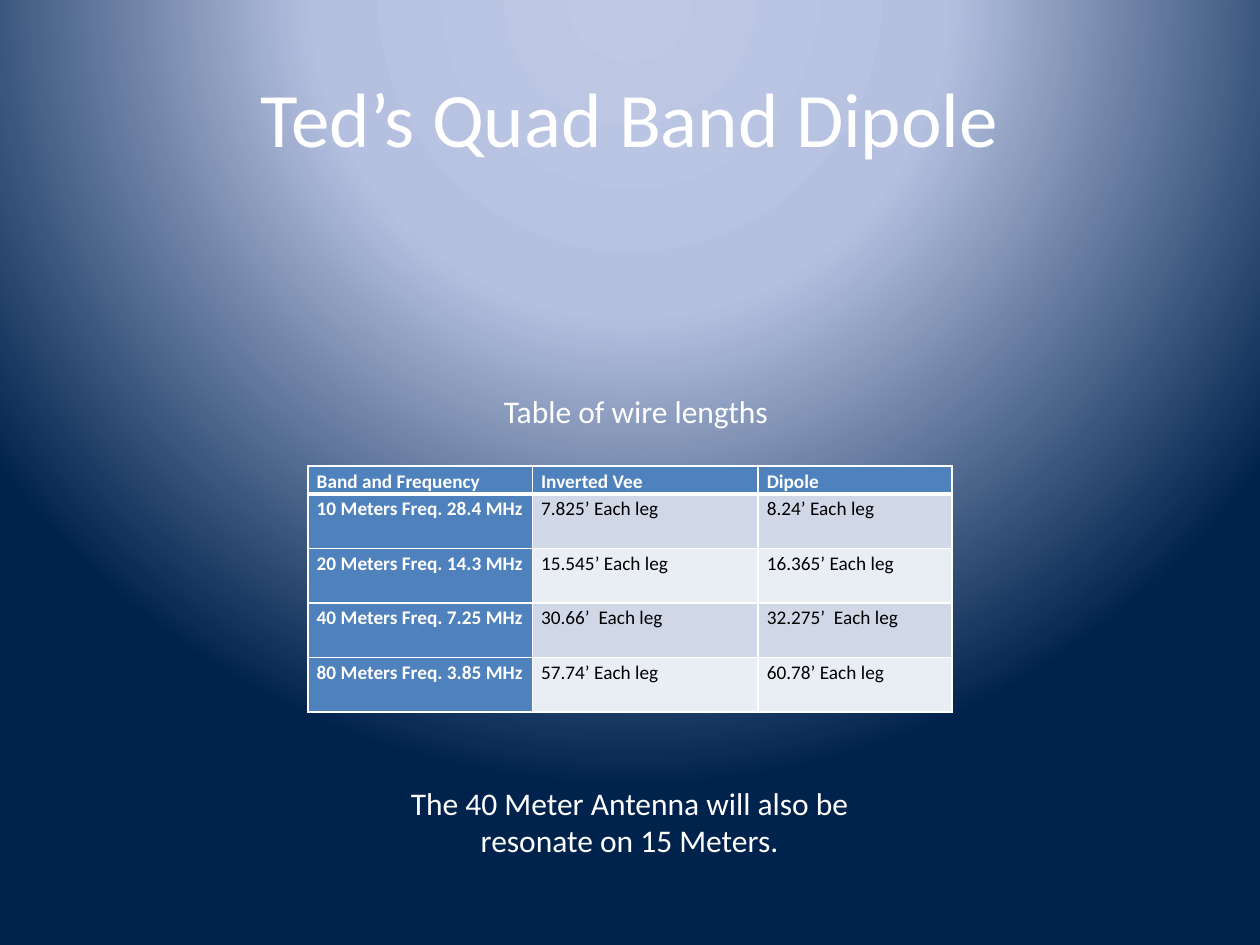
from dataclasses import dataclass

from pptx import Presentation
from pptx.dml.color import RGBColor
from pptx.enum import text
from pptx.oxml import parse_xml
from pptx.oxml.ns import nsdecls
from pptx.util import Pt


@dataclass(frozen=True)
class Theme:
    font: str = "Calibri"
    title: int = 44
    body: int = 18
    cell: int = 11
    light: str = "FFFFFF"
    dark: str = "000000"
    accent: str = "4F81BD"
    bands: tuple = ("D0D8E8", "E9EDF4")
    glow: tuple = ((0, "BFC9E5"), (40, "B5C0E0"), (100, "00234D"))


class Deck:
    def __init__(self, prs, theme):
        self.theme = theme
        self.s = prs.slides.add_slide(prs.slide_layouts[6])

    def background(self):
        """Radial gradient centred above the slide's top edge."""
        stops = "".join(
            f'<a:gs pos="{pos * 1000}"><a:srgbClr val="{color}"/></a:gs>'
            for pos, color in self.theme.glow)
        bg = parse_xml(
            f'<p:bg {nsdecls("p", "a")}><p:bgPr><a:gradFill rotWithShape="1">'
            f'<a:gsLst>{stops}</a:gsLst><a:path path="circle">'
            '<a:fillToRect l="50000" t="-80000" r="50000" b="180000"/>'
            '</a:path></a:gradFill><a:effectLst/></p:bgPr></p:bg>')
        self.s.element.cSld.insert(0, bg)

    def run(self, p, words, size, color, bold=False):
        r = p.add_run()
        r.text = words
        r.font.name = self.theme.font
        r.font.size = Pt(size)
        r.font.bold = bold
        r.font.color.rgb = RGBColor.from_string(color)

    def label(self, words, box, size, anchor=text.MSO_ANCHOR.TOP, grow=True):
        sp = self.s.shapes.add_textbox(*map(Pt, box))
        tf = sp.text_frame
        tf.word_wrap = True
        tf.vertical_anchor = anchor
        if grow:
            tf.auto_size = text.MSO_AUTO_SIZE.SHAPE_TO_FIT_TEXT
        p = tf.paragraphs[0]
        p.alignment = text.PP_ALIGN.CENTER
        self.run(p, words, size, self.theme.light)

    def borders(self, cell, top, bottom):
        """Left, right, top and bottom lines; they must precede the fill."""
        sides = (("L", 1), ("R", 1), ("T", top), ("B", bottom))
        tc_pr = cell._tc.get_or_add_tcPr()
        for i, (side, width) in enumerate(sides):
            tc_pr.insert(i, parse_xml(
                f'<a:ln{side} {nsdecls("a")} w="{Pt(width)}"><a:solidFill>'
                f'<a:srgbClr val="{self.theme.light}"/></a:solidFill></a:ln{side}>'))

    def table(self, data, left, top, widths, heights):
        t = self.theme
        frame = self.s.shapes.add_table(
            len(data), len(widths), Pt(left), Pt(top),
            Pt(sum(widths)), Pt(sum(heights)))
        tbl = frame.table
        tbl.first_row = tbl.horz_banding = False
        for col, width in zip(tbl.columns, widths):
            col.width = Pt(width)
        for i, (row, values) in enumerate(zip(tbl.rows, data)):
            row.height = Pt(heights[i])
            for j, (cell, words) in enumerate(zip(row.cells, values)):
                heading = i == 0 or j == 0
                cell.margin_left = cell.margin_right = Pt(5)
                cell.margin_top = cell.margin_bottom = 0
                cell.fill.solid()
                cell.fill.fore_color.rgb = RGBColor.from_string(
                    t.accent if heading else t.bands[(i - 1) % 2])
                self.borders(cell, 3 if i == 1 else 1, 3 if i == 0 else 1)
                p = cell.text_frame.paragraphs[0]
                p.line_spacing = 1.15
                self.run(p, words, t.cell, t.light if heading else t.dark, heading)


WIRE_LENGTHS = [
    ("Band and Frequency", "Inverted Vee", "Dipole"),
    ("10 Meters Freq. 28.4 MHz", "7.825’ Each leg", "8.24’ Each leg"),
    ("20 Meters Freq. 14.3 MHz", "15.545’ Each leg", "16.365’ Each leg"),
    ("40 Meters Freq. 7.25 MHz", "30.66’  Each leg", "32.275’  Each leg"),
    ("80 Meters Freq. 3.85 MHz", "57.74’ Each leg", "60.78’ Each leg"),
]


def main():
    prs = Presentation()
    prs.slide_width, prs.slide_height = Pt(720), Pt(540)
    theme = Theme()
    deck = Deck(prs, theme)

    # Background and title
    deck.background()
    deck.label("Ted’s Quad Band Dipole", (36, 21.6, 648, 90), theme.title,
               text.MSO_ANCHOR.MIDDLE, grow=False)

    # Wire length table
    deck.table(WIRE_LENGTHS, 176, 266.4, (128.2, 129, 110.8), [15.8] + [31.2] * 4)

    # Caption and closing note
    deck.label("Table of wire lengths", (210.4, 220.4, 306, 51), theme.body)
    deck.label("The 40 Meter Antenna will also be resonate on 15 Meters.",
               (203.8, 444.2, 312, 51), theme.body)

    prs.save("out.pptx")


if __name__ == "__main__":
    main()
